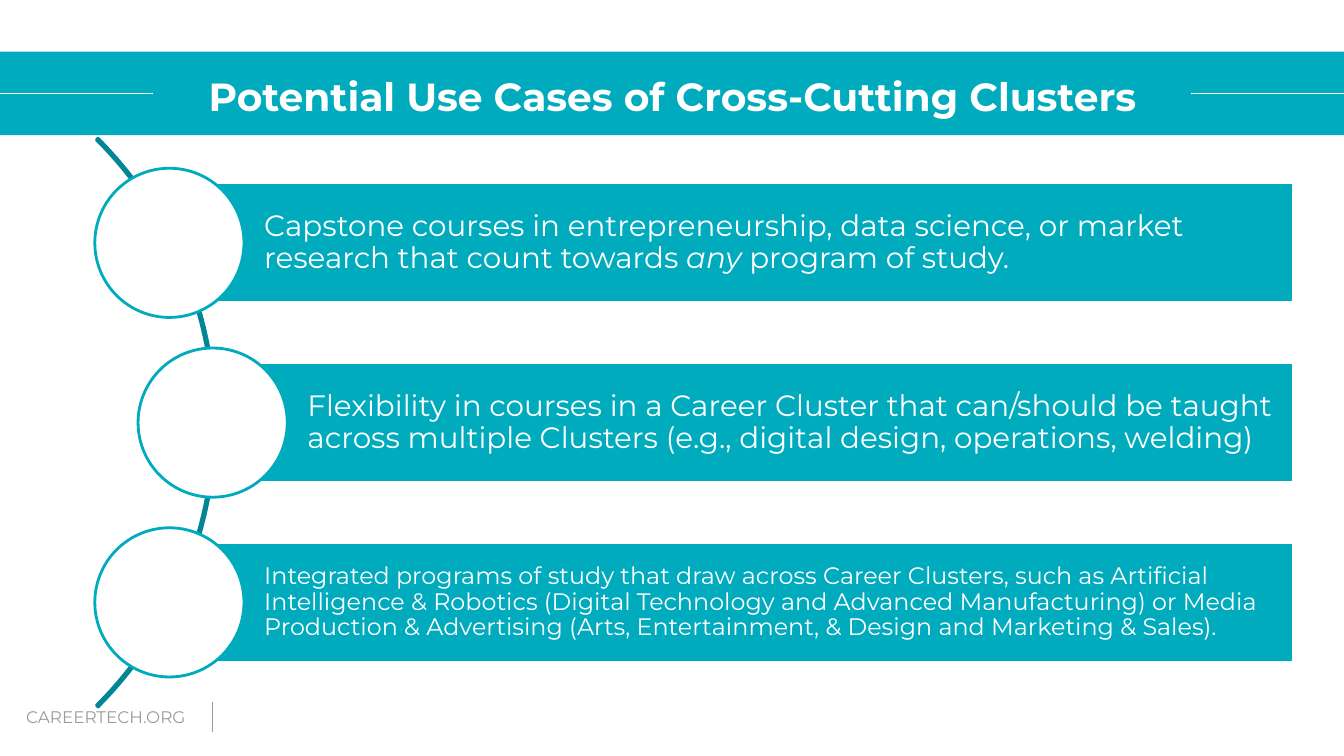
import pptx
import pptx.util
import pptx.dml.color
import pptx.enum.shapes
import pptx.enum.text
import pptx.oxml.ns
from lxml import etree

Cm, Pt = pptx.util.Cm, pptx.util.Pt
RGBColor = pptx.dml.color.RGBColor
SHAPE = pptx.enum.shapes.MSO_SHAPE
ALIGN = pptx.enum.text.PP_ALIGN
ANCHOR = pptx.enum.text.MSO_ANCHOR

# Content: each use case is its text size and runs of (text, italic)
TITLE = "Potential Use Cases of Cross-Cutting Clusters"
FOOTER = "CAREERTECH.ORG"
USE_CASES = [
    (21, [("Capstone courses in entrepreneurship, data science, or market research "
           "that count towards ", False), ("any", True), (" program of study.", False)]),
    (21, [("Flexibility in courses in a Career Cluster that can/should be taught across "
           "multiple Clusters (e.g., digital design, operations, welding)", False)]),
    (17, [("Integrated programs of study that draw across Career Clusters, such as "
           "Artificial Intelligence & Robotics (Digital Technology and Advanced "
           "Manufacturing) or Media Production & Advertising (Arts, Entertainment, & "
           "Design and Marketing & Sales).", False)]),
]

# Colours and font
TEAL = RGBColor(0x00, 0xAB, 0xBD)
DARK_TEAL = RGBColor(0x00, 0x86, 0x95)
WHITE = RGBColor(0xFF, 0xFF, 0xFF)
GREY = RGBColor(0x99, 0x9B, 0x9C)
FONT = "Montserrat"

# Layout in centimetres
SLIDE_WIDTH, SLIDE_HEIGHT = 33.87, 19.05
BAND_TOP, BAND_HEIGHT = 1.3, 2.11
RULE_Y, RULE_LENGTH = 2.36, 3.86
FOOTER_TOP, FOOTER_HEIGHT, DIVIDER_X = 17.68, 0.76, 5.36
ARC_LEFT, ARC_SIZE = -14.83, 20.27
CENTRE_Y, ROW_PITCH = 10.65, 4.53
BAR_LEFT, BAR_RIGHT, BAR_HEIGHT = 4.27, 32.59, 3.02
MIDDLE_SHIFT, CIRCLE_SIZE = 1.09, 3.76

presentation = pptx.Presentation()
presentation.slide_width, presentation.slide_height = Cm(SLIDE_WIDTH), Cm(SLIDE_HEIGHT)
slide = presentation.slides.add_slide(presentation.slide_layouts[6])


def add_shape(kind, left, top, width, height, fill=None, line=None):
    shape = slide.shapes.add_shape(kind, Cm(left), Cm(top), Cm(width), Cm(height))
    shape.shadow.inherit = False
    if fill is None:
        shape.fill.background()
    else:
        shape.fill.solid()
        shape.fill.fore_color.rgb = fill
    if line is None:
        shape.line.fill.background()
    else:
        shape.line.color.rgb = line
        shape.line.width = Pt(2)
    return shape


def add_line(start_x, start_y, end_x, end_y, color):
    line = slide.shapes.add_connector(pptx.enum.shapes.MSO_CONNECTOR.STRAIGHT,
                                      Cm(start_x), Cm(start_y), Cm(end_x), Cm(end_y))
    line.line.color.rgb = color
    line.line.width = Pt(0.75)
    etree.SubElement(line._element.spPr, pptx.oxml.ns.qn("a:effectLst"))


def write_text(shape, runs, size, color, margins, bold=False,
               align=ALIGN.LEFT, anchor=ANCHOR.MIDDLE, spacing=0.9):
    frame = shape.text_frame
    frame_format = {"word_wrap": True, "vertical_anchor": anchor}
    for side, margin in zip(("left", "top", "right", "bottom"), margins):
        frame_format["margin_" + side] = Cm(margin)
    for name, value in frame_format.items():
        setattr(frame, name, value)
    paragraph = frame.paragraphs[0]
    paragraph.alignment, paragraph.line_spacing = align, spacing
    for text, italic in runs:
        run = paragraph.add_run()
        run.text = text
        font_format = {"name": FONT, "size": Pt(size), "bold": bold, "italic": italic}
        for name, value in font_format.items():
            setattr(run.font, name, value)
        run.font.color.rgb = color


# Title band with a rule on each side
add_shape(SHAPE.RECTANGLE, 0, BAND_TOP, SLIDE_WIDTH, BAND_HEIGHT, TEAL)
for rule_left in (0, SLIDE_WIDTH - RULE_LENGTH):
    add_line(rule_left, RULE_Y, rule_left + RULE_LENGTH, RULE_Y, WHITE)
title = slide.shapes.add_textbox(Cm(4.17), Cm(BAND_TOP), Cm(25.55), Cm(BAND_HEIGHT))
write_text(title, [(TITLE, False)], 28, WHITE, (0, 0.25, 0, 0), bold=True, align=ALIGN.CENTER)

# Footer and its divider
footer = slide.shapes.add_textbox(Cm(0.41), Cm(FOOTER_TOP), Cm(4.98), Cm(FOOTER_HEIGHT))
write_text(footer, [(FOOTER, False)], 12, GREY, (0.25, 0.13, 0.25, 0.13),
           anchor=ANCHOR.TOP, spacing=1.0)
add_line(DIVIDER_X, FOOTER_TOP, DIVIDER_X, FOOTER_TOP + FOOTER_HEIGHT, GREY)

# Arc behind the use cases, from 315 to 45 degrees
arc = add_shape(SHAPE.BLOCK_ARC, ARC_LEFT, CENTRE_Y - ARC_SIZE / 2, ARC_SIZE, ARC_SIZE,
                line=DARK_TEAL)
for index, value in enumerate((189, 27, 0.003)):
    arc.adjustments[index] = value

# Use cases: a bar with a circle centred on its left edge
middle_row = len(USE_CASES) // 2
for row, (size, runs) in enumerate(USE_CASES):
    row_y = CENTRE_Y + (row - middle_row) * ROW_PITCH
    left = BAR_LEFT + (MIDDLE_SHIFT if row == middle_row else 0)
    bar = add_shape(SHAPE.RECTANGLE, left, row_y - BAR_HEIGHT / 2,
                    BAR_RIGHT - left, BAR_HEIGHT, TEAL, WHITE)
    write_text(bar, runs, size, WHITE, (2.39, 0.13, 0.13, 0.13))
    add_shape(SHAPE.OVAL, left - CIRCLE_SIZE / 2, row_y - CIRCLE_SIZE / 2,
              CIRCLE_SIZE, CIRCLE_SIZE, WHITE, TEAL)

presentation.save("out.pptx")
